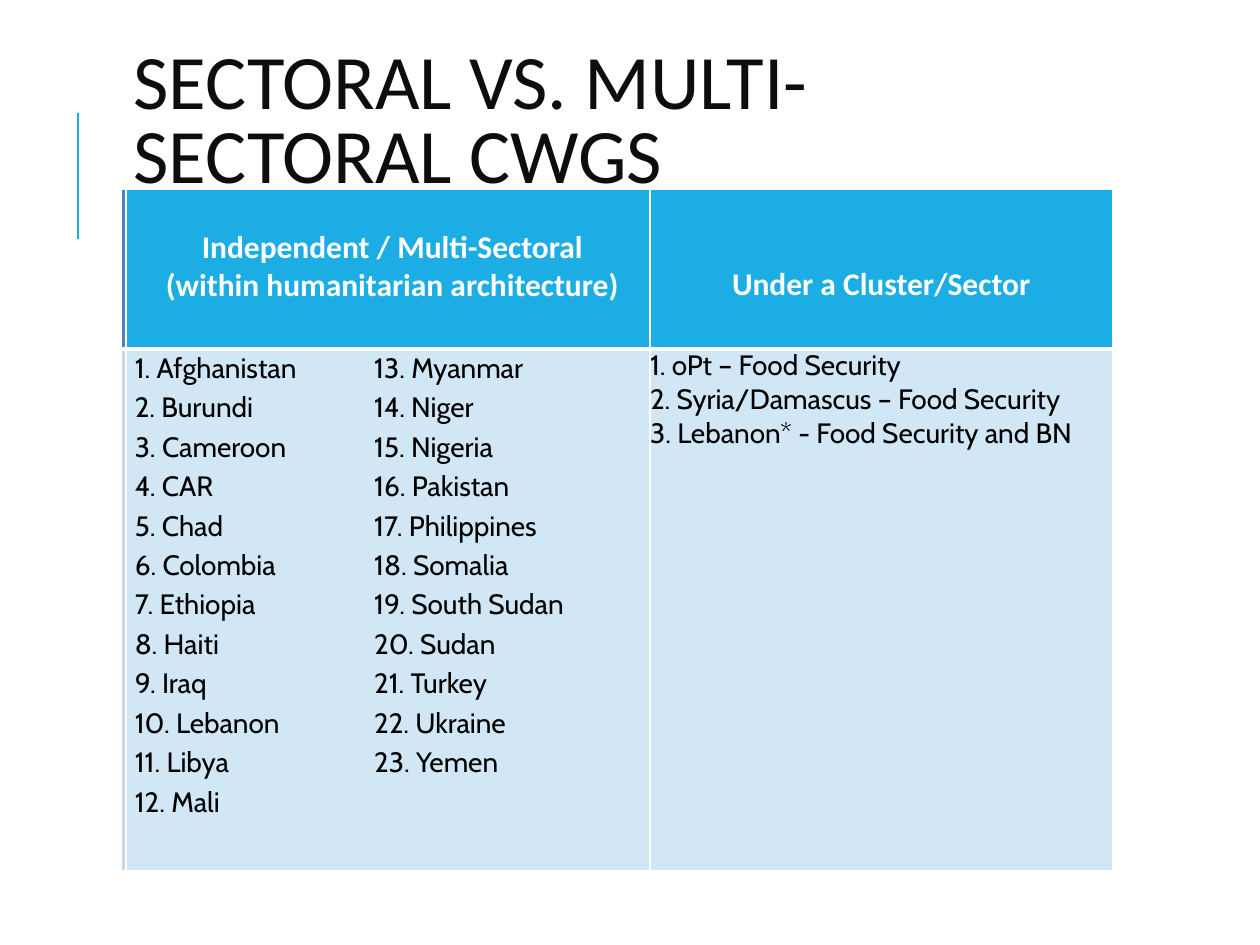
from itertools import zip_longest

from lxml import etree
from pptx import Presentation
from pptx import util as u
from pptx.dml.color import RGBColor
from pptx.enum import shapes, text
from pptx.oxml import ns

ACCENT, PALE, WHITE, BLACK = "1CADE4", "D1E7F6", "FFFFFF", "000000"

INDEPENDENT = [
    "Afghanistan", "Burundi", "Cameroon", "CAR", "Chad", "Colombia",
    "Ethiopia", "Haiti", "Iraq", "Lebanon", "Libya", "Mali",
    "Myanmar", "Niger", "Nigeria", "Pakistan", "Philippines", "Somalia",
    "South Sudan", "Sudan", "Turkey", "Ukraine", "Yemen",
]
UNDER_CLUSTER = [
    "oPt – Food Security",
    "Syria/Damascus – Food Security",
    "Lebanon* - Food Security and BN",
]


def rgb(value):
    return RGBColor.from_string(value)


def numbered(names):
    return [f"{number}. {name}" for number, name in enumerate(names, 1)]


class SlideBuilder:
    heading_font = "Calibri"
    body_font = "Cabin"

    def __init__(self, slide):
        self.slide = slide

    def run(self, paragraph, words, font, size, color, bold=False):
        run = paragraph.add_run()
        run.text = words
        run.font.name = font
        run.font.size = u.Pt(size)
        run.font.bold = bold
        run.font.color.rgb = rgb(color)

    def title(self, words, left, top, width, height):
        title = self.slide.shapes.title
        title.left, title.top = u.Inches(left), u.Inches(top)
        title.width, title.height = u.Inches(width), u.Inches(height)
        frame = title.text_frame
        frame.word_wrap = True
        frame.auto_size = text.MSO_AUTO_SIZE.NONE
        frame.vertical_anchor = text.MSO_ANCHOR.MIDDLE
        paragraph = frame.paragraphs[0]
        paragraph.alignment = text.PP_ALIGN.LEFT
        paragraph.line_spacing = 0.8
        self.run(paragraph, words, self.heading_font, 44, "0D0D0D")

    def line(self, x1, y1, x2, y2, color, weight):
        line = self.slide.shapes.add_connector(
            shapes.MSO_CONNECTOR.STRAIGHT,
            u.Inches(x1), u.Inches(y1), u.Inches(x2), u.Inches(y2))
        line.line.color.rgb = rgb(color)
        line.line.width = u.Pt(weight)
        etree.SubElement(line._element.spPr, ns.qn("a:effectLst"))

    def table(self, left, top, widths, heights):
        table = self.slide.shapes.add_table(
            len(heights), len(widths), u.Inches(left), u.Inches(top),
            u.Inches(sum(widths)), u.Inches(sum(heights))).table
        for column, width in zip(table.columns, widths):
            column.width = u.Inches(width)
        for row, height in zip(table.rows, heights):
            row.height = u.Inches(height)
        return table

    def cell(self, cell, fill, borders):
        """Fill a cell and give it white borders, in points by side."""
        cell.margin_left = cell.margin_right = 0
        cell.margin_top = cell.margin_bottom = 0
        cell.fill.solid()
        cell.fill.fore_color.rgb = rgb(fill)
        properties = cell._tc.get_or_add_tcPr()
        for position, (side, weight) in enumerate(borders.items()):
            border = etree.Element(ns.qn(f"a:ln{side}"), w=str(u.Pt(weight)))
            solid = etree.SubElement(border, ns.qn("a:solidFill"))
            etree.SubElement(solid, ns.qn("a:srgbClr"), val=WHITE)
            properties.insert(position, border)

    def paragraphs(self, cell, lines, font, size, color, bold=False,
                   align=text.PP_ALIGN.LEFT, top=0, before=0, indent=0, tab=None):
        cell.margin_top = u.Inches(top)
        frame = cell.text_frame
        for index, words in enumerate(lines):
            paragraph = frame.add_paragraph() if index else frame.paragraphs[0]
            paragraph.alignment = align
            paragraph.space_before = u.Pt(before if index else 0)
            properties = paragraph._p.get_or_add_pPr()
            properties.set("marL", str(u.Inches(indent)))
            if tab:
                stops = etree.SubElement(properties, ns.qn("a:tabLst"))
                etree.SubElement(stops, ns.qn("a:tab"),
                                 pos=str(u.Inches(tab)), algn="l")
            self.run(paragraph, words, font, size, color, bold)


def main():
    deck = Presentation()
    deck.slide_width, deck.slide_height = u.Inches(10), u.Inches(7.5)
    page = SlideBuilder(deck.slides.add_slide(deck.slide_layouts[5]))

    page.line(0.62, 1.9, 0.62, 0.9, ACCENT, 1.5)
    page.title("SECTORAL VS. MULTI-SECTORAL CWGS", 0.96, 0.17, 7.97, 1.64)

    groups = page.table(0.96, 1.5, [0.04, 4.16, 3.67], [1.27, 4.14])
    row_styles = [
        (["4F81BC", ACCENT, ACCENT], {"L": 1, "R": 1, "T": 1, "B": 3}),
        (["C5D9F0", PALE, PALE], {"L": 1, "R": 1, "T": 3, "B": 1}),
    ]
    for row, (fills, borders) in zip(groups.rows, row_styles):
        for cell, fill in zip(row.cells, fills):
            page.cell(cell, fill, borders)

    headings = [
        (["Independent / Multi-Sectoral",
          "(within humanitarian architecture)"], 0.31, 0.07),
        (["Under a Cluster/Sector"], 0.61, 0),
    ]
    for column, (lines, top, indent) in enumerate(headings, 1):
        page.paragraphs(groups.cell(0, column), lines, page.heading_font, 18,
                        WHITE, bold=True, align=text.PP_ALIGN.CENTER,
                        top=top, indent=indent)

    countries = numbered(INDEPENDENT)
    pairs = zip_longest(countries[:12], countries[12:])
    page.paragraphs(groups.cell(1, 1),
                    ["\t".join(filter(None, pair)) for pair in pairs],
                    page.body_font, 16, BLACK,
                    top=0.02, before=3.2, indent=0.07, tab=1.9)
    page.paragraphs(groups.cell(1, 2), numbered(UNDER_CLUSTER),
                    page.body_font, 16, BLACK)

    deck.save("out.pptx")


if __name__ == "__main__":
    main()
